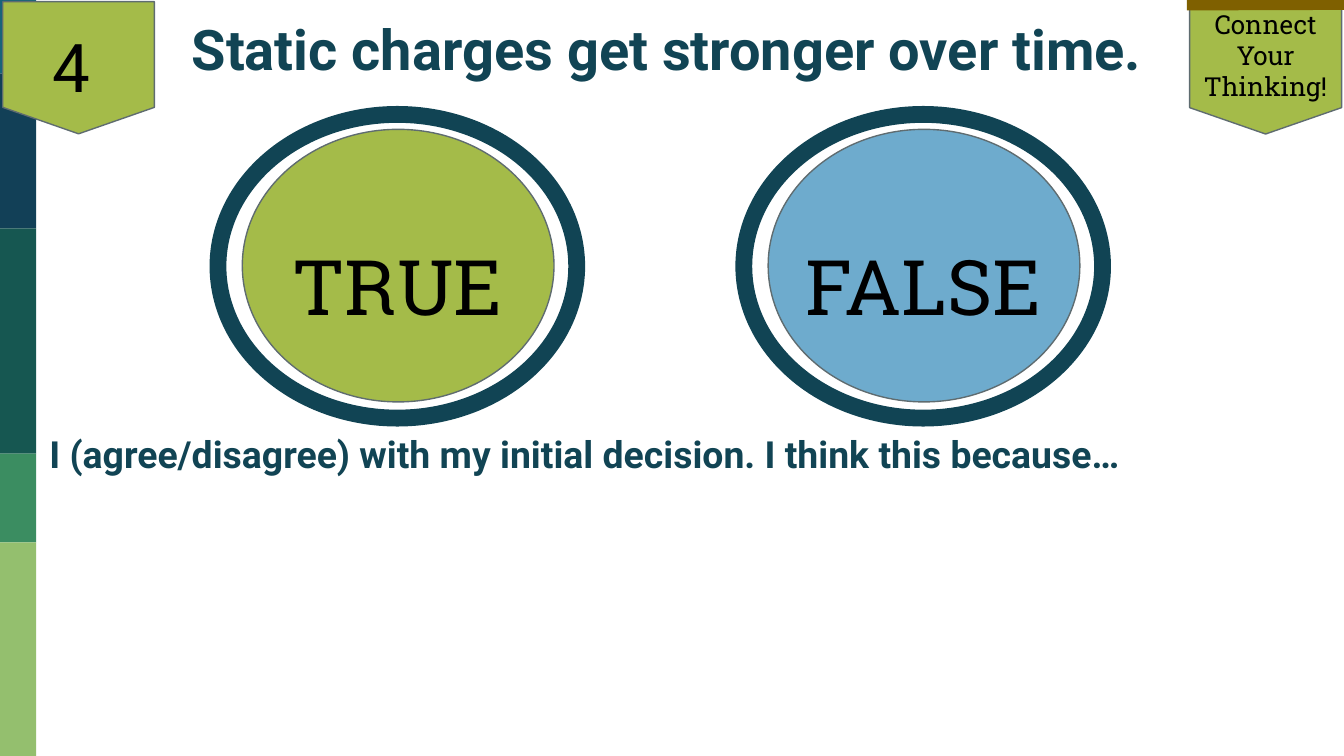
from lxml import etree
from pptx import Presentation
from pptx.dml.color import RGBColor
from pptx.enum.shapes import MSO_CONNECTOR, MSO_SHAPE
from pptx.enum.text import MSO_ANCHOR, PP_ALIGN
from pptx.oxml.ns import qn
from pptx.util import Pt

RECTANGLE = MSO_SHAPE.RECTANGLE
OVAL = MSO_SHAPE.OVAL
TAG = MSO_SHAPE.FLOWCHART_OFFPAGE_CONNECTOR
STRAIGHT = MSO_CONNECTOR.STRAIGHT
TOP, MIDDLE = MSO_ANCHOR.TOP, MSO_ANCHOR.MIDDLE
LEFT, CENTER = PP_ALIGN.LEFT, PP_ALIGN.CENTER

COLORS = {
    "teal": "18637B", "navy": "124057", "pine": "165751",
    "green": "3B8D61", "leaf": "94BF6E", "ink": "114454",
    "lime": "A4BB49", "sky": "6EABCD", "outline": "5F6C70",
    "bronze": "7F6000", "black": "000000",
}
HEADING = {"name": "Roboto", "size": Pt(30), "bold": True}
PROMPT = {"name": "Roboto", "size": Pt(20), "bold": True}
NUMBER = {"name": "Roboto", "size": Pt(36)}
TAG_LABEL = {"name": "Roboto Slab", "size": Pt(14)}
CHOICE = {"name": "Roboto Slab", "size": Pt(41)}


class SlideBuilder:
    """Holds the colours and the slide being drawn; boxes are (left, top, width, height) in points."""

    def __init__(self, slide, colors):
        self.slide = slide
        self.colors = colors

    def rgb(self, color):
        return RGBColor.from_string(self.colors[color])

    def shape(self, kind, box, fill=None, line=None, weight=0.75):
        shape = self.slide.shapes.add_shape(kind, *map(Pt, box))
        shape.shadow.inherit = False
        if fill:
            shape.fill.solid()
            shape.fill.fore_color.rgb = self.rgb(fill)
        else:
            shape.fill.background()
        if line:
            shape.line.color.rgb = self.rgb(line)
            shape.line.width = Pt(weight)
        else:
            shape.line.fill.background()
        return shape

    def label(self, shape, wording, font, color="black", align=CENTER, anchor=TOP):
        frame = shape.text_frame
        layout = {"word_wrap": True, "vertical_anchor": anchor}
        layout.update({f"margin_{side}": Pt(7.2) for side in ("left", "top", "right", "bottom")})
        for name, value in layout.items():
            setattr(frame, name, value)
        paragraph = frame.paragraphs[0]
        paragraph.alignment = align
        run = paragraph.add_run()
        run.text = wording
        for name, value in font.items():
            setattr(run.font, name, value)
        run.font.color.rgb = self.rgb(color)

    def text(self, box, wording, font, **style):
        self.label(self.slide.shapes.add_textbox(*map(Pt, box)), wording, font, **style)

    def line(self, start, end, color, weight):
        line = self.slide.shapes.add_connector(STRAIGHT, *map(Pt, start + end))
        line.line.color.rgb = self.rgb(color)
        line.line.width = Pt(weight)
        etree.SubElement(line._element.spPr, qn("a:effectLst"))

    def choice(self, left, wording, fill):
        """Draws a filled oval inside a thick ring, with the answer over it."""
        self.shape(OVAL, (left + 13, 69.3, 167, 146), fill, "outline")
        self.shape(OVAL, (left, 61.3, 192.2, 162.7), line="ink", weight=9)
        self.text((left + 18.9, 121, 154.8, 43.2), wording, CHOICE)


def main():
    presentation = Presentation()
    presentation.slide_width, presentation.slide_height = Pt(720), Pt(405)
    slide = presentation.slides.add_slide(presentation.slide_layouts[6])
    builder = SlideBuilder(slide, COLORS)

    band_tops = [0, 39.4, 122.4, 243, 290.6, 405]
    band_fills = ["teal", "navy", "pine", "green", "leaf"]
    for fill, top, bottom in zip(band_fills, band_tops, band_tops[1:]):
        builder.shape(RECTANGLE, (0, top, 19.4, bottom - top), fill)

    builder.text((84.2, 0.7, 553.7, 47.5), "Static charges get stronger over time. ",
                 HEADING, color="ink")

    builder.shape(TAG, (1.5, 0.9, 81.2, 70.8), "lime", "outline")
    builder.text((20.9, 6.5, 17.3, 67), "4", NUMBER, align=LEFT)

    thinking_tag = builder.shape(TAG, (637.3, 1.2, 81.4, 70.6), "lime", "outline")
    builder.label(thinking_tag, "Connect Your Thinking!", TAG_LABEL, anchor=MIDDLE)
    builder.line((635.8, 1.1), (720, 0.8), "bronze", 9)

    builder.choice(116.8, "TRUE", "lime")
    builder.choice(398.5, "FALSE", "sky")

    builder.text((19.4, 223.9, 700.6, 180.7),
                 "I (agree/disagree) with my initial decision. I think this because…",
                 PROMPT, color="ink", align=LEFT)

    presentation.save("out.pptx")


if __name__ == "__main__":
    main()
